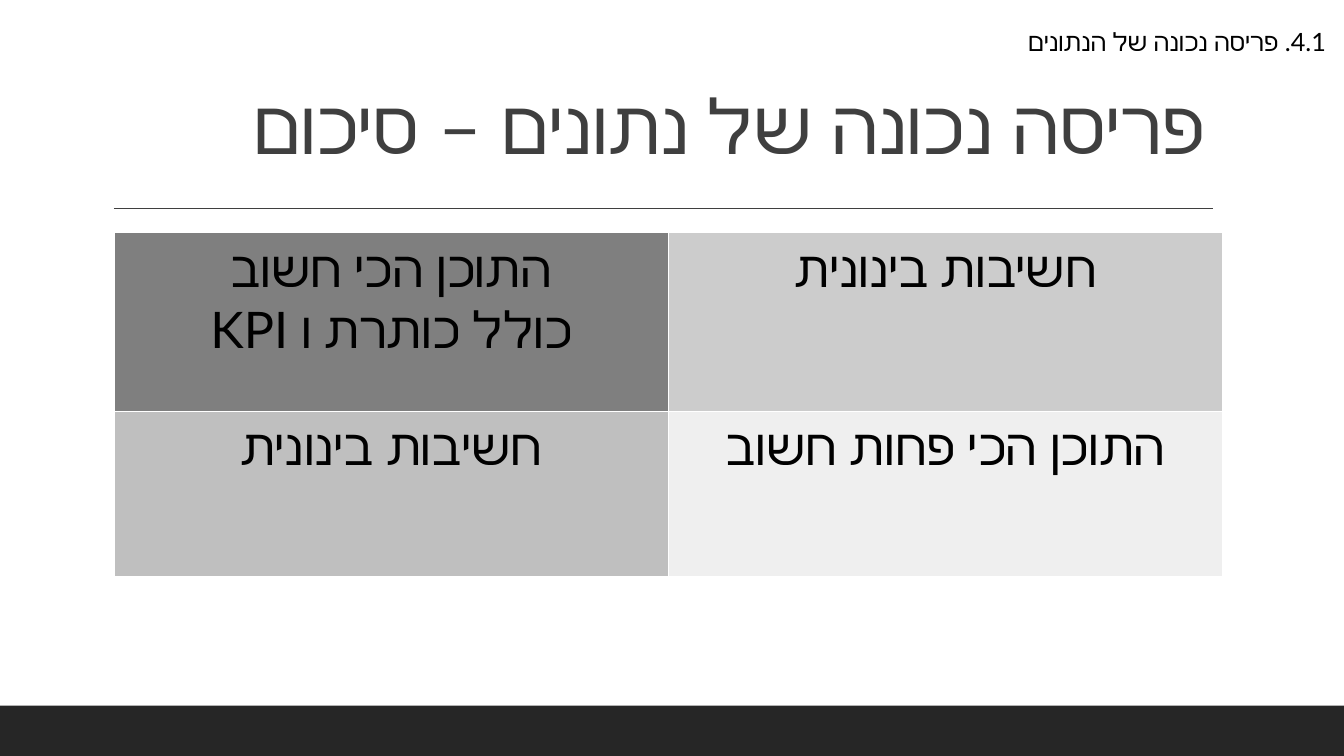
from lxml.etree import SubElement
from pptx import Presentation
from pptx.dml.color import RGBColor
from pptx.enum.shapes import MSO_CONNECTOR, MSO_SHAPE
from pptx.enum.text import MSO_ANCHOR, PP_ALIGN
from pptx.oxml.ns import qn
from pptx.util import Inches, Pt

COLORS = {
    "footer": "262626",
    "title": "3F3F3F",
    "text": "000000",
    "most": "7F7F7F",
    "medium_top": "CCCCCC",
    "medium_bottom": "BFBFBF",
    "least": "EFEFEF",
}
FONT = "Lato"


def color(name):
    return RGBColor.from_string(COLORS[name])


def write_hebrew(frame, text, size, color_name, align):
    para = frame.paragraphs[0]
    para.text = text
    para.alignment = align
    para._p.get_or_add_pPr().set("rtl", "1")
    for span in para.runs:
        span.font.size = Pt(size)
        span.font.bold = False
        span.font.name = FONT
        span.font.color.rgb = color(color_name)
        SubElement(span._r.get_or_add_rPr(), qn("a:cs")).set("typeface", FONT)
    return para


deck = Presentation()
deck.slide_width = Inches(13.33)
deck.slide_height = Inches(7.5)
page = deck.slides.add_slide(deck.slide_layouts[6])

footer = page.shapes.add_shape(
    MSO_SHAPE.RECTANGLE, 0, Inches(7), Inches(13.33), Inches(0.5)
)
footer.shadow.inherit = False
footer.fill.solid()
footer.fill.fore_color.rgb = color("footer")
footer.line.fill.background()

rule = page.shapes.add_connector(
    MSO_CONNECTOR.STRAIGHT, Inches(1.13), Inches(2.07), Inches(12.03), Inches(2.07)
)
rule.line.color.rgb = color("title")
rule.line.width = Pt(1)
SubElement(rule._element.spPr, qn("a:effectLst"))

title = page.shapes.add_textbox(
    Inches(-1.46), Inches(0.15), Inches(13.51), Inches(1.59)
)
title.text_frame.word_wrap = True
title.text_frame.vertical_anchor = MSO_ANCHOR.BOTTOM
heading = write_hebrew(
    title.text_frame, "פריסה נכונה של נתונים – סיכום", 54, "title", PP_ALIGN.RIGHT
)
heading.line_spacing = 0.9

quadrants = [
    [("התוכן הכי חשוב\vכולל כותרת ו KPI", "most"), ("חשיבות בינונית", "medium_top")],
    [("חשיבות בינונית", "medium_bottom"), ("התוכן הכי פחות חשוב", "least")],
]
table = page.shapes.add_table(
    2, 2, Inches(1.13), Inches(2.31), Inches(11), Inches(3.41)
).table
for row, height, contents in zip(table.rows, (1.77, 1.64), quadrants):
    row.height = Inches(height)
    for cell, (text, shade) in zip(row.cells, contents):
        cell.fill.solid()
        cell.fill.fore_color.rgb = color(shade)
        write_hebrew(cell.text_frame, text, 36, "text", PP_ALIGN.CENTER)

section = page.shapes.add_textbox(
    Inches(6.42), Inches(0.21), Inches(6.83), Inches(0.4)
)
section.text_frame.word_wrap = True
write_hebrew(
    section.text_frame, "4.1. פריסה נכונה של הנתונים", 18, "text", PP_ALIGN.RIGHT
)

deck.save("out.pptx")
